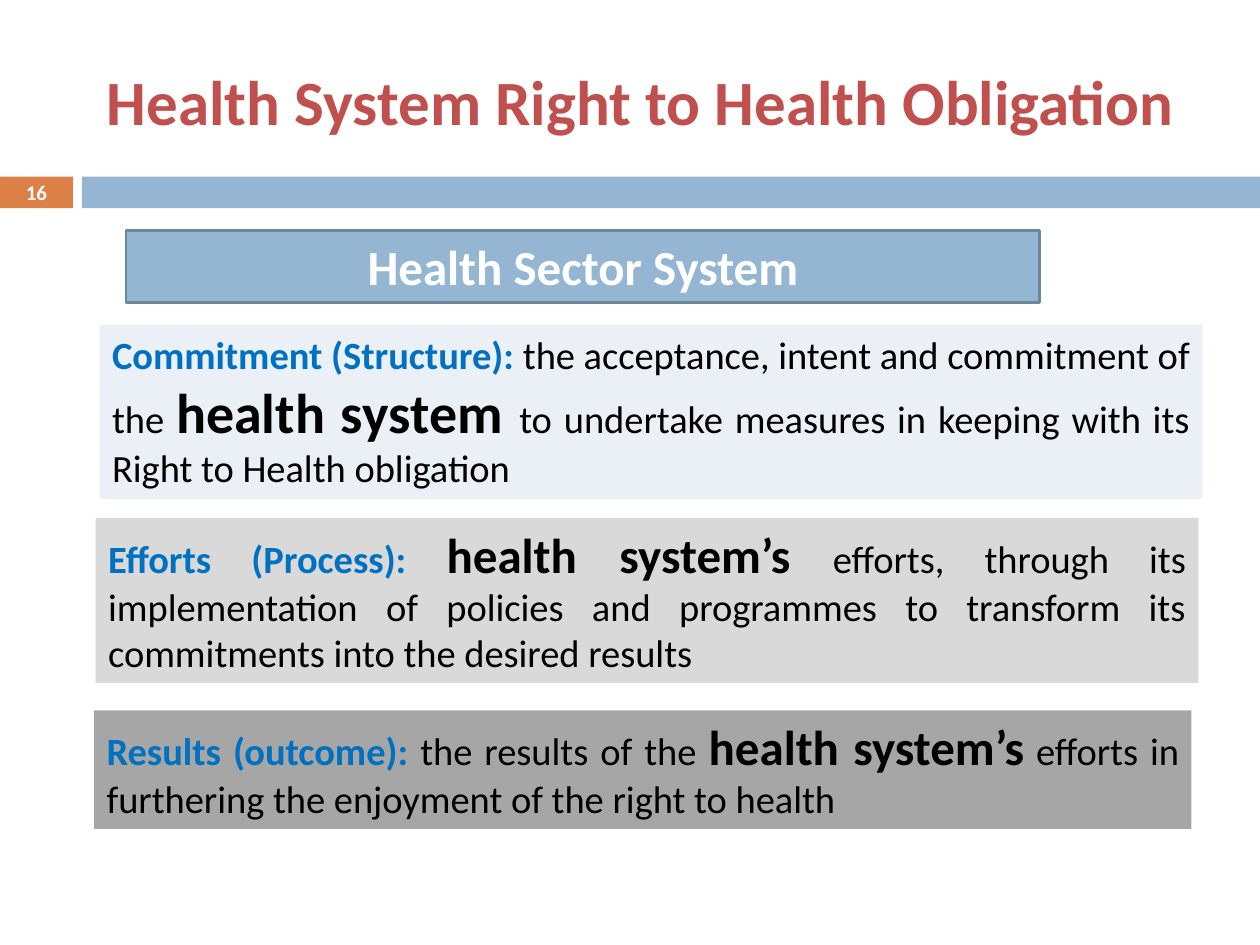
import pptx
import pptx.util
import pptx.dml.color
import pptx.enum.shapes
import pptx.enum.text

Cm = pptx.util.Cm
Align = pptx.enum.text.PP_ALIGN
Fit = pptx.enum.text.MSO_AUTO_SIZE
Anchor = pptx.enum.text.MSO_ANCHOR

HUES = {
    "orange": "DD8047",
    "blue": "94B6D2",
    "edge": "6D879B",
    "red": "C0504D",
    "label": "0070C0",
    "pale": "EAF0F6",
    "light": "D9D9D9",
    "grey": "A6A6A6",
    "black": "000000",
    "white": "FFFFFF",
}

PANELS = [
    ((2.01, 6.55, 22.23, 3.51), "pale", [
        ("Commitment (Structure): ", 22, "label", True),
        ("the acceptance, intent and commitment of the ", 22, "black", False),
        ("health system ", 32, "black", True),
        ("to undertake measures in keeping with its Right to Health obligation ",
         22, "black", False),
    ]),
    ((1.93, 10.44, 22.23, 3.33), "light", [
        ("Efforts (Process): ", 22, "label", True),
        ("health system’s ", 28, "label", True),
        ("efforts, through its implementation of policies and programmes "
         "to transform its commitments into the desired results",
         22, "black", False),
    ]),
    ((1.9, 14.32, 22.12, 2.39), "grey", [
        ("Results (outcome): ", 22, "label", True),
        ("the results of the ", 22, "black", False),
        ("health system’s", 28, "black", True),
        (" efforts in furthering the enjoyment of the right to health",
         22, "black", False),
    ]),
]
PANELS[1][2][1] = ("health system’s ", 28, "black", True)


def tint(name):
    """Return the named colour."""
    return pptx.dml.color.RGBColor.from_string(HUES[name])


def style(run, size, hue, bold):
    """Format one run."""
    run.font.name = "Calibri"
    run.font.size = pptx.util.Pt(size)
    run.font.bold = bold
    run.font.color.rgb = tint(hue)


def write(frame, runs, align, anchor):
    """Fill a text frame with one paragraph of styled runs."""
    frame.word_wrap = True
    frame.vertical_anchor = anchor
    para = frame.paragraphs[0]
    para.alignment = align
    for text, size, hue, bold in runs:
        run = para.add_run()
        run.text = text
        style(run, size, hue, bold)


def add_bar(slide, box, fill, edge=None):
    """Add a flat rectangle, outlined if an edge colour is given."""
    kind = pptx.enum.shapes.MSO_SHAPE.RECTANGLE
    bar = slide.shapes.add_shape(kind, *map(Cm, box))
    bar.shadow.inherit = False
    bar.fill.solid()
    bar.fill.fore_color.rgb = tint(fill)
    if edge:
        bar.line.color.rgb = tint(edge)
        bar.line.width = pptx.util.Pt(1.5)
    else:
        bar.line.fill.background()
    return bar


def add_panel(slide, box, fill, runs, align=Align.JUSTIFY, edge=None):
    """Add a rectangle that grows with its text."""
    frame = add_bar(slide, box, fill, edge).text_frame
    write(frame, runs, align, Anchor.TOP)
    frame.auto_size = Fit.SHAPE_TO_FIT_TEXT


def set_title(slide, text):
    """Place and format the title."""
    title = slide.shapes.title
    title.left, title.top, title.width, title.height = map(
        Cm, (1.9, 0.43, 22.43, 3.18))
    write(title.text_frame, [(text, 36, "red", True)],
          Align.JUSTIFY, Anchor.MIDDLE)


def add_number(slide, text):
    """Add the page number over the orange bar."""
    box = slide.shapes.add_textbox(*map(Cm, (0, 3.53, 1.47, 0.69)))
    write(box.text_frame, [(text, 11.9, "white", True)],
          Align.CENTER, Anchor.MIDDLE)


def main():
    """Build and save the slide."""
    deck = pptx.Presentation()
    deck.slide_width, deck.slide_height = Cm(25.4), Cm(19.05)
    slide = deck.slides.add_slide(deck.slide_layouts[5])
    add_bar(slide, (0, 3.56, 1.47, 0.64), "orange")
    add_bar(slide, (1.65, 3.56, 23.75, 0.64), "blue")
    set_title(slide, "Health System Right to Health Obligation ")
    add_number(slide, "16")
    for box, fill, runs in PANELS:
        add_panel(slide, box, fill, runs)
    add_panel(slide, (2.54, 4.65, 18.42, 1.45), "blue",
              [("Health Sector System", 28, "white", True)],
              Align.CENTER, "edge")
    deck.save("out.pptx")


if __name__ == "__main__":
    main()
